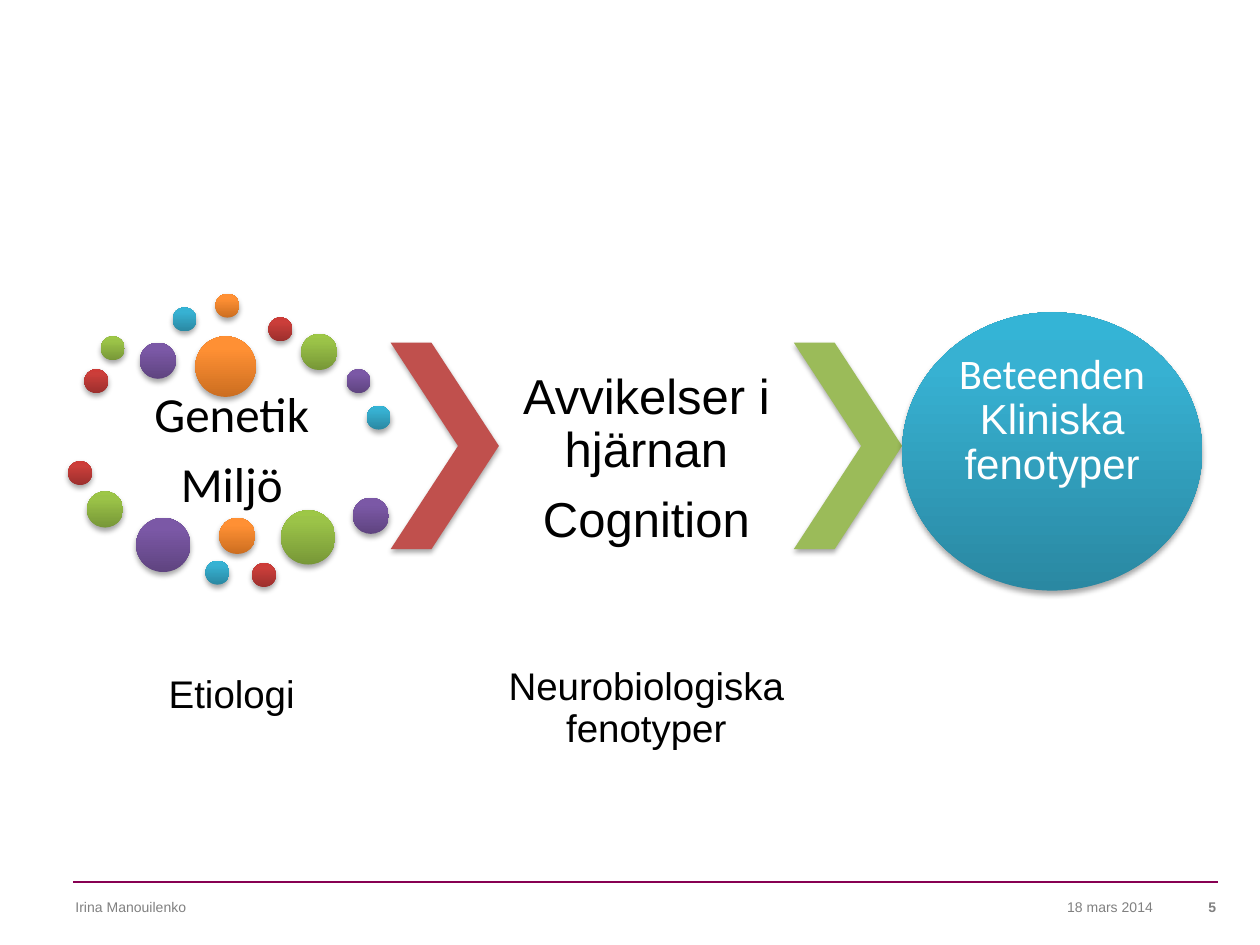
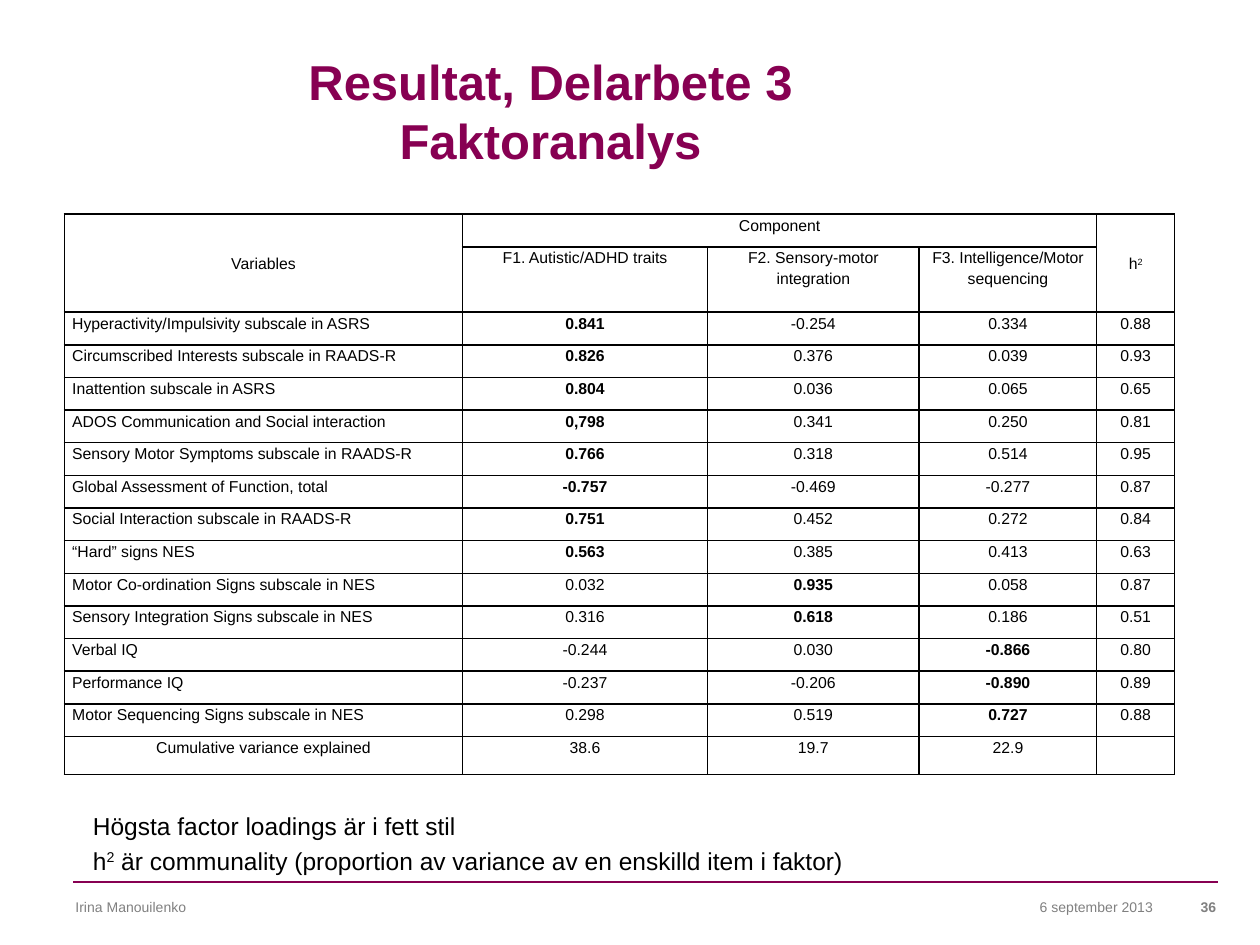
from copy import deepcopy
from dataclasses import dataclass
from itertools import cycle

from lxml import etree
from pptx import Presentation
from pptx.dml.color import RGBColor
from pptx.enum.shapes import MSO_CONNECTOR, MSO_SHAPE
from pptx.enum.text import MSO_ANCHOR, PP_ALIGN
from pptx.oxml.ns import qn
from pptx.util import Pt

LEFT, CENTER, RIGHT = PP_ALIGN.LEFT, PP_ALIGN.CENTER, PP_ALIGN.RIGHT
TOP, MIDDLE = MSO_ANCHOR.TOP, MSO_ANCHOR.MIDDLE
OVAL, CHEVRON = MSO_SHAPE.OVAL, MSO_SHAPE.CHEVRON
STRAIGHT = MSO_CONNECTOR.STRAIGHT


@dataclass(frozen=True)
class Theme:
    sans: str = "Arial"
    alt: str = "Calibri"
    plum: str = "870052"
    grey: str = "808080"
    black: str = "000000"
    white: str = "FFFFFF"
    chevrons: tuple = ("C0504D", "9BBB59")
    # gradient colours at 0, 80 and 100 percent, bottom to top
    red: tuple = ("9C2F2D", "CB3E3A", "CE3B37")
    green: tuple = ("779737", "9BC348", "9DC746")
    purple: tuple = ("5F4480", "7B58A6", "7C57A8")
    blue: tuple = ("2A88A2", "37B1D2", "34B4D6")
    orange: tuple = ("CC6E20", "FF9034", "FF9136")
    title: int = 28
    stage: int = 28
    outcome: int = 24
    caption: int = 22
    body: int = 14
    table: int = 9
    footer: int = 8


T = Theme()

# ---- Content ----
AUTHOR = "Irina Manouilenko"
FOOTERS = [("18 mars 2014", "5"), ("6 september 2013", "36")]

CAUSES = [["Genetik"], ["Miljö"]]
BRAIN = [["Avvikelser i hjärnan"], ["Cognition"]]
OUTCOME = [[("Beteenden ", {"font": T.alt}), "Kliniska fenotyper"]]
CAUSE_CAPTION = [["Etiologi"]]
BRAIN_CAPTION = [["Neurobiologiska fenotyper"]]

SMALL, MEDIUM, LARGE, HUGE = 13.7, 20.7, 31, 34.6
DOTS = [
    (48.2, 211, SMALL), (57.6, 192.2, SMALL), (79.9, 195.8, MEDIUM),
    (98.6, 175.7, SMALL), (123.1, 167.8, SMALL), (153.4, 181.4, SMALL),
    (172.1, 190.8, MEDIUM), (198, 211, SMALL), (209.5, 231.8, SMALL),
    (111.6, 192.2, HUGE), (38.9, 263.5, SMALL), (49.7, 280.8, MEDIUM),
    (77.8, 295.9, LARGE), (117.4, 320.4, SMALL), (125.3, 295.9, MEDIUM),
    (144, 321.8, SMALL), (160.6, 291.6, LARGE), (201.6, 284.4, MEDIUM),
]

SUPER = {"superscript": True}
TITLE = [["Resultat, Delarbete 3", "\n", "Faktoranalys"]]
NOTES = [
    ["Högsta factor loadings är i fett stil"],
    ["h", ("2", SUPER),
     " är communality (proportion av variance av en enskilld item i faktor)"],
]
FACTORS = ["F1. Autistic/ADHD traits", "F2. Sensory-motor integration",
           "F3. Intelligence/Motor sequencing"]
# variable, three loadings, communality, number of the bold factor
LOADINGS = [
    ("Hyperactivity/Impulsivity subscale in ASRS", "0.841", "-0.254", "0.334", "0.88", 1),
    ("Circumscribed Interests subscale in RAADS-R", "0.826", "0.376", "0.039", "0.93", 1),
    ("Inattention subscale in ASRS", "0.804", "0.036", "0.065", "0.65", 1),
    ("ADOS Communication and Social interaction", "0,798", "0.341", "0.250", "0.81", 1),
    ("Sensory Motor Symptoms subscale in RAADS-R", "0.766", "0.318", "0.514", "0.95", 1),
    ("Global Assessment of Function, total", "-0.757", "-0.469", "-0.277", "0.87", 1),
    ("Social Interaction subscale in RAADS-R", "0.751", "0.452", "0.272", "0.84", 1),
    ("“Hard” signs NES", "0.563", "0.385", "0.413", "0.63", 1),
    ("Motor Co-ordination Signs subscale in NES", "0.032", "0.935", "0.058", "0.87", 2),
    ("Sensory Integration Signs subscale in NES", "0.316", "0.618", "0.186", "0.51", 2),
    ("Verbal IQ", "-0.244", "0.030", "-0.866", "0.80", 3),
    ("Performance IQ", "-0.237", "-0.206", "-0.890", "0.89", 3),
    ("Motor Sequencing Signs subscale in NES", "0.298", "0.519", "0.727", "0.88", 3),
]
TOTALS = ("Cumulative variance explained", "38.6", "19.7", "22.9", "")
COLUMN_WIDTHS = [227.5, 140, 121, 101.5, 44.5]
ROW_HEIGHT = 18.68


# ---- Helpers ----
def rgb(value):
    return RGBColor.from_string(value)


def write(tf, paragraphs, size, color=T.black, font=T.sans, bold=False, align=LEFT,
          spacing=None, before=0, after=0):
    """Fill a text frame; a run is a string or a (string, overrides) pair."""
    for i, runs in enumerate(paragraphs):
        p = tf.paragraphs[0] if i == 0 else tf.add_paragraph()
        p.alignment = align
        p.line_spacing = spacing
        p.space_before = Pt(before if i else 0)
        p.space_after = Pt(after)
        for run in runs:
            text, extra = (run, {}) if isinstance(run, str) else run
            if text == "\n":
                p.add_line_break()
                continue
            r = p.add_run()
            r.text = text
            r.font.name = extra.get("font", font)
            r.font.size = Pt(size)
            r.font.bold = bold
            r.font.color.rgb = rgb(color)
            if extra.get("superscript"):
                r.font._element.set("baseline", "30000")


def add_text(s, box, paragraphs, size, anchor=TOP, insets=(7.2, 3.6, 7.2, 3.6), **style):
    tf = s.shapes.add_textbox(*map(Pt, box)).text_frame
    tf.word_wrap = True
    tf.vertical_anchor = anchor
    tf.margin_left, tf.margin_top, tf.margin_right, tf.margin_bottom = map(Pt, insets)
    write(tf, paragraphs, size, **style)


def add_stage_text(s, box, paragraphs, size, anchor=MIDDLE, insets=(3, 3, 3, 3), **style):
    add_text(s, box, paragraphs, size, anchor, insets, align=CENTER, spacing=0.9,
             after=0.35 * size, **style)


def add_shadow(sp):
    sp.shadow.inherit = False
    effects = sp._element.spPr.find(qn("a:effectLst"))
    shadow = etree.SubElement(effects, qn("a:outerShdw"), blurRad=str(Pt(3.1)),
                              dist=str(Pt(1.8)), dir="5400000", rotWithShape="0")
    color = etree.SubElement(shadow, qn("a:srgbClr"), val=T.black)
    etree.SubElement(color, qn("a:alpha"), val="35000")


def add_ball(s, x, y, w, h, colors):
    sp = s.shapes.add_shape(OVAL, Pt(x), Pt(y), Pt(w), Pt(h))
    sp.line.fill.background()
    sp.fill.gradient()
    sp.fill.gradient_angle = 90
    stop_list = next(sp._element.spPr.iter(qn("a:gsLst")))
    stop_list.append(deepcopy(stop_list[-1]))
    for stop, position, color in zip(sp.fill.gradient_stops, (0, 0.8, 1), colors):
        stop.position = position
        stop.color.rgb = rgb(color)
    add_shadow(sp)


def add_chevron(s, x, y, w, h, color):
    sp = s.shapes.add_shape(CHEVRON, Pt(x), Pt(y), Pt(w), Pt(h))
    sp.adjustments[0] = 0.623
    sp.fill.solid()
    sp.fill.fore_color.rgb = rgb(color)
    sp.line.fill.background()
    add_shadow(sp)


def add_slide(prs, date, number):
    s = prs.slides.add_slide(prs.slide_layouts[6])
    rule = s.shapes.add_connector(STRAIGHT, Pt(42), Pt(504), Pt(696), Pt(504))
    rule.line.color.rgb = rgb(T.plum)
    rule.line.width = Pt(0.75)
    etree.SubElement(rule._element.spPr, qn("a:effectLst"))
    for x, w, text, align, bold in [(36, 228, AUTHOR, LEFT, False),
                                    (516, 150, date, RIGHT, False),
                                    (648, 54, number, RIGHT, True)]:
        add_text(s, (x, 510, w, 18), [[text]], T.footer, color=T.grey,
                 align=align, bold=bold)
    return s


def set_cell(cell, runs, align=CENTER, bold=False, anchor=TOP):
    cell.margin_left = cell.margin_right = Pt(4.5)
    cell.margin_top = cell.margin_bottom = 0
    cell.vertical_anchor = anchor
    write(cell.text_frame, [runs], T.table, bold=bold, align=align, spacing=1.15)


def style_cell(cell):
    """Clear the fill and draw a thin black border on all four sides."""
    cell.fill.background()
    tc_pr = cell._tc.get_or_add_tcPr()
    for i, side in enumerate(("a:lnL", "a:lnR", "a:lnT", "a:lnB")):
        line = etree.Element(qn(side), w=str(Pt(1)))
        fill = etree.SubElement(line, qn("a:solidFill"))
        etree.SubElement(fill, qn("a:srgbClr"), val=T.black)
        tc_pr.insert(i, line)


# ---- Slides ----
def build_pathway(prs):
    s = add_slide(prs, *FOOTERS[0])
    text_w, arrow_w, arrow_y, arrow_h = 168.5, 61.9, 195.8, 118.1
    cause_x, arrow_x = 48.2, 223.2
    brain_x = arrow_x + arrow_w
    arrow2_x = brain_x + text_w
    outcome_x = arrow2_x + arrow_w

    add_stage_text(s, (cause_x, 193.7, text_w, 118.8), CAUSES, T.stage, TOP,
                   (3, 29, 3, 3), font=T.alt)
    add_stage_text(s, (cause_x, 345.6, text_w, 104.4), CAUSE_CAPTION, T.caption)
    colors = cycle((T.red, T.green, T.purple, T.blue, T.orange))
    for (x, y, size), color in zip(DOTS, colors):
        add_ball(s, x, y, size, size, color)
    for x, color in zip((arrow_x, arrow2_x), T.chevrons):
        add_chevron(s, x, arrow_y, arrow_w, arrow_h, color)
    add_stage_text(s, (brain_x, 167.8, text_w, 190), BRAIN, T.stage)
    add_stage_text(s, (brain_x, 352.8, text_w, 104.4), BRAIN_CAPTION, T.caption)
    add_ball(s, outcome_x, 178.5, 171.5, 159, T.blue)
    add_stage_text(s, (outcome_x + 25.2, 201.6, 121, 113), OUTCOME, T.outcome,
                   insets=(0, 0, 0, 35), color=T.white)


def build_factor_analysis(prs):
    s = add_slide(prs, *FOOTERS[1])
    add_text(s, (8.6, 26, 612, 90.7), TITLE, T.title, color=T.plum, bold=True, align=CENTER)
    add_text(s, (46, 460, 612, 39.6), NOTES, T.body, before=0.2 * T.body)

    row_count = len(LOADINGS) + 3
    frame = s.shapes.add_table(row_count, len(COLUMN_WIDTHS), Pt(36.8), Pt(122.4),
                               Pt(sum(COLUMN_WIDTHS)), Pt(ROW_HEIGHT * (row_count + 1)))
    table = frame.table
    table.first_row = table.horz_banding = False
    for column, width in zip(table.columns, COLUMN_WIDTHS):
        column.width = Pt(width)
    for i, row in enumerate(table.rows):
        row.height = Pt(ROW_HEIGHT * (2 if i == 1 else 1))
    for cell in table.iter_cells():
        style_cell(cell)

    for first, last in [((0, 0), (1, 0)), ((0, 1), (0, 3)), ((0, 4), (1, 4))]:
        table.cell(*first).merge(table.cell(*last))
    set_cell(table.cell(0, 0), ["Variables"], anchor=MIDDLE)
    set_cell(table.cell(0, 1), ["Component"])
    set_cell(table.cell(0, 4), ["h", ("2", SUPER)], anchor=MIDDLE)
    for c, factor in enumerate(FACTORS, 1):
        set_cell(table.cell(1, c), [factor])
    for r, (*values, strongest) in enumerate(LOADINGS, 2):
        for c, value in enumerate(values):
            set_cell(table.cell(r, c), [value], CENTER if c else LEFT, c == strongest)
    for c, value in enumerate(TOTALS):
        set_cell(table.cell(row_count - 1, c), [value] if value else [])


def main():
    prs = Presentation()
    prs.slide_width, prs.slide_height = Pt(720), Pt(540)
    build_pathway(prs)
    build_factor_analysis(prs)
    prs.save("out.pptx")


if __name__ == "__main__":
    main()
